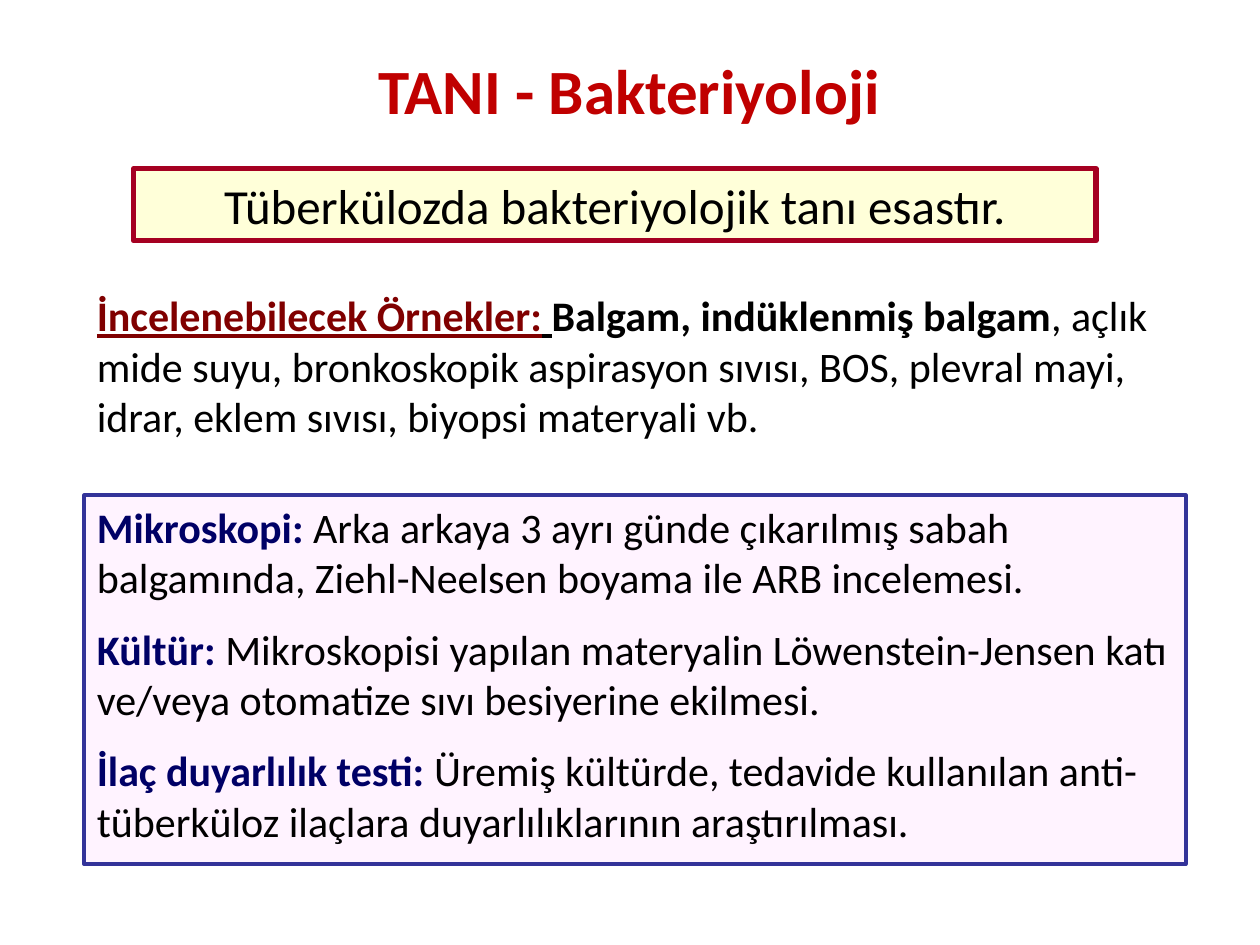
import pptx
import pptx.util
import pptx.dml.color
import pptx.enum.shapes
import pptx.enum.text

Inches = pptx.util.Inches
Pt = pptx.util.Pt
RGBColor = pptx.dml.color.RGBColor
Align = pptx.enum.text.PP_ALIGN

RED = RGBColor(0xC0, 0x00, 0x00)
MAROON = RGBColor(0x80, 0x00, 0x00)
NAVY = RGBColor(0x00, 0x00, 0x66)
BLACK = RGBColor(0x00, 0x00, 0x00)
CREAM = RGBColor(0xFF, 0xFF, 0xD9)
WINE = RGBColor(0xA5, 0x00, 0x21)
PINK = RGBColor(0xFF, 0xF3, 0xFF)
BLUE = RGBColor(0x33, 0x33, 0x99)

TITLE = "TANI - Bakteriyoloji"
CLAIM = "Tüberkülozda bakteriyolojik tanı esastır."
SAMPLES = [
    ("İncelenebilecek Örnekler:", dict(color=MAROON, bold=True, under=True)),
    (" ", dict(bold=True, under=True)),
    ("Balgam, indüklenmiş balgam", dict(bold=True)),
    (", açlık mide suyu, bronkoskopik aspirasyon sıvısı, BOS, plevral mayi, "
     "idrar, eklem sıvısı, biyopsi materyali vb.", {}),
]
TESTS = [
    ("Mikroskopi:", " Arka arkaya 3 ayrı günde çıkarılmış sabah "
     "balgamında, Ziehl-Neelsen boyama ile ARB incelemesi."),
    ("Kültür:", " Mikroskopisi yapılan materyalin Löwenstein-Jensen katı "
     "ve/veya otomatize sıvı besiyerine ekilmesi."),
    ("İlaç duyarlılık testi:", " Üremiş kültürde, tedavide kullanılan "
     "anti-tüberküloz ilaçlara duyarlılıklarının araştırılması."),
]
LEFT, WIDTH = 0.67, 8.74


def add_run(para, text, size=24, color=BLACK, bold=False, under=False):
    run = para.add_run()
    run.text = text
    font = run.font
    font.name = "Calibri"
    font.size = Pt(size)
    font.color.rgb = color
    font.bold = bold
    font.underline = under


def add_box(slide, place, paras, align=Align.LEFT, fill=None, line=None, width=0):
    spot = [Inches(v) for v in place]
    if fill is None:
        box = slide.shapes.add_textbox(*spot)
    else:
        box = slide.shapes.add_shape(pptx.enum.shapes.MSO_SHAPE.RECTANGLE, *spot)
        box.shadow.inherit = False
        box.fill.solid()
        box.fill.fore_color.rgb = fill
        box.line.color.rgb = line
        box.line.width = Pt(width)
    frame = box.text_frame
    frame.word_wrap = True
    frame.vertical_anchor = pptx.enum.text.MSO_ANCHOR.TOP
    for i, runs in enumerate(paras):
        para = frame.add_paragraph() if i else frame.paragraphs[0]
        para.alignment = align
        if i:
            para.space_before = Pt(12)
        for text, style in runs:
            add_run(para, text, **style)


def main():
    deck = pptx.Presentation()
    deck.slide_width, deck.slide_height = Inches(10), Inches(7.5)
    slide = deck.slides.add_slide(deck.slide_layouts[6])
    add_box(slide, (2.16, 0.36, 5.67, 0.7),
            [[(TITLE, dict(size=36, color=RED, bold=True))]], align=Align.CENTER)
    tests = [[(head, dict(color=NAVY, bold=True)), (body, {})] for head, body in TESTS]
    add_box(slide, (LEFT, 3.93, WIDTH, 2.93), tests, fill=PINK, line=BLUE, width=2.25)
    add_box(slide, (1.06, 1.34, 7.64, 0.57), [[(CLAIM, dict(size=28))]],
            align=Align.CENTER, fill=CREAM, line=WINE, width=3)
    add_box(slide, (LEFT, 2.25, WIDTH, 1.31), [SAMPLES])
    deck.save("out.pptx")


if __name__ == "__main__":
    main()
